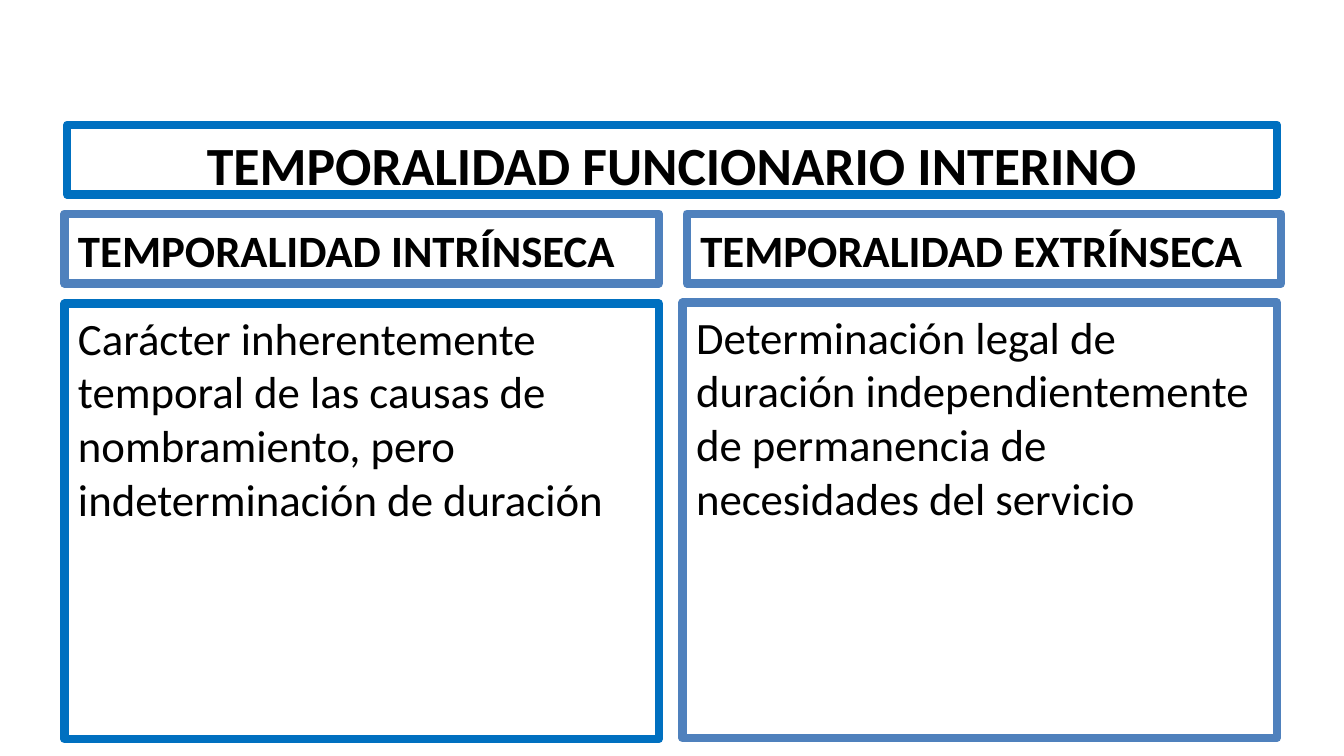
from dataclasses import dataclass

from lxml.etree import SubElement
from pptx import Presentation
from pptx.dml.color import RGBColor
from pptx.enum.text import MSO_ANCHOR, MSO_AUTO_SIZE, PP_ALIGN
from pptx.oxml.ns import qn
from pptx.util import Cm, Pt

HUES = {"text": "000000", "blue": "0070C0", "steel": "4F81BD"}
WIDE, HIGH = 11.23, 8.23  # column width and panel height
BAR = 1.32  # height of the title and heading bars
HEAD = 4.04  # top of the heading bars


@dataclass
class Box:
    slot: int
    left: float
    top: float
    width: float
    height: float
    hue: str
    text: str
    size: float = 24
    bold: bool = False
    align: PP_ALIGN = PP_ALIGN.LEFT
    anchor: MSO_ANCHOR = MSO_ANCHOR.TOP


BOXES = [
    # Title
    Box(0, 1.27, 2.36, 22.86, BAR, "blue", "TEMPORALIDAD FUNCIONARIO INTERINO",
        28.8, True, PP_ALIGN.CENTER),
    # Left column
    Box(1, 1.22, HEAD, WIDE, BAR, "steel", "TEMPORALIDAD INTRÍNSECA",
        bold=True, anchor=MSO_ANCHOR.BOTTOM),
    Box(2, 1.22, 5.74, WIDE, HIGH, "blue",
        "Carácter inherentemente temporal de las causas de nombramiento, "
        "pero indeterminación de duración"),
    # Right column
    Box(3, 12.98, HEAD, WIDE, BAR, "steel", "TEMPORALIDAD EXTRÍNSECA",
        bold=True, anchor=MSO_ANCHOR.BOTTOM),
    Box(4, 12.9, 5.72, WIDE, HIGH, "steel",
        "Determinación legal de duración independientemente de permanencia "
        "de necesidades del servicio"),
]


def draw(slide, box: Box) -> None:
    """Place, outline and fill in one placeholder."""
    shape = slide.placeholders[box.slot]
    shape.left, shape.top = Cm(box.left), Cm(box.top)
    shape.width, shape.height = Cm(box.width), Cm(box.height)
    shape.line.color.rgb = RGBColor.from_string(HUES[box.hue])
    shape.line.width = Pt(4.5)

    frame = shape.text_frame
    frame.text = box.text
    frame.word_wrap = True
    frame.auto_size = MSO_AUTO_SIZE.NONE
    frame.vertical_anchor = box.anchor

    # Plain paragraph without bullet or indent
    para = frame.paragraphs[0]
    para.alignment = box.align
    para.space_before = Pt(0)
    props = para._p.get_or_add_pPr()
    props.set("marL", "0")
    props.set("indent", "0")
    SubElement(props, qn("a:buNone"))

    font = para.runs[0].font
    font.name = "Calibri"
    font.size = Pt(box.size)
    font.bold = box.bold
    font.color.rgb = RGBColor.from_string(HUES["text"])


def main() -> None:
    deck = Presentation()
    deck.slide_width, deck.slide_height = Cm(25.4), Cm(14.29)
    # Comparison layout: title, two headings, two panels
    slide = deck.slides.add_slide(deck.slide_layouts[4])
    for box in BOXES:
        draw(slide, box)
    deck.save("out.pptx")


if __name__ == "__main__":
    main()
